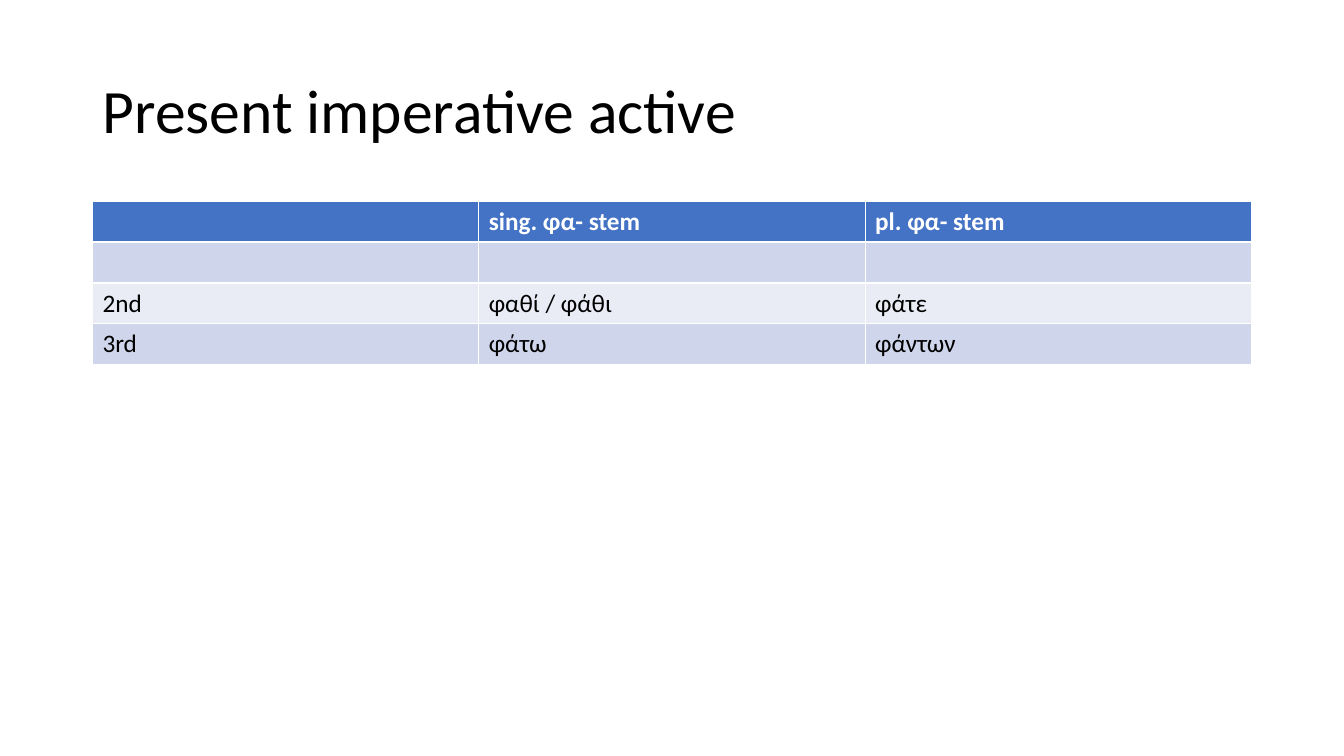
from pptx import Presentation
from pptx.dml.color import RGBColor
from pptx.enum.text import MSO_ANCHOR, PP_ALIGN
from pptx.util import Cm, Pt

COLORS = {
    "text": "000000",
    "header": "4472C4",
    "header_text": "FFFFFF",
    "odd_row": "CFD5EA",
    "even_row": "E9EBF5",
}
FONT = "Calibri"
ROWS = [
    ["", "sing. φα- stem", "pl. φα- stem"],
    ["", "", ""],
    ["2nd", "φαθί / φάθι", "φάτε"],
    ["3rd", "φάτω", "φάντων"],
]


def style_font(font, size, color, bold=False):
    font.name = FONT
    font.size = Pt(size)
    font.bold = bold
    font.color.rgb = RGBColor.from_string(COLORS[color])


prs = Presentation()
prs.slide_width, prs.slide_height = Cm(33.87), Cm(19.05)
s = prs.slides.add_slide(prs.slide_layouts[5])  # Title Only

# Title
title = s.shapes.title
title.left, title.top, title.width, title.height = Cm(2.33), Cm(1.01), Cm(29.21), Cm(3.68)
tf = title.text_frame
tf.text = "Present imperative active"
tf.vertical_anchor = MSO_ANCHOR.MIDDLE
p = tf.paragraphs[0]
p.alignment = PP_ALIGN.LEFT
p.line_spacing = 0.9
style_font(p.runs[0].font, 44, "text")

# Imperative forms; the default table style draws the white borders
table = s.shapes.add_table(len(ROWS), len(ROWS[0]), Cm(2.33), Cm(5.07), Cm(29.21), Cm(4.12)).table
for i, row in enumerate(ROWS):
    is_header = i == 0
    fill = "header" if is_header else "odd_row" if i % 2 else "even_row"
    for j, text in enumerate(row):
        cell = table.cell(i, j)
        cell.fill.solid()
        cell.fill.fore_color.rgb = RGBColor.from_string(COLORS[fill])
        cell.text_frame.text = text
        for r in cell.text_frame.paragraphs[0].runs:
            style_font(r.font, 18, "header_text" if is_header else "text", is_header)

prs.save("out.pptx")
